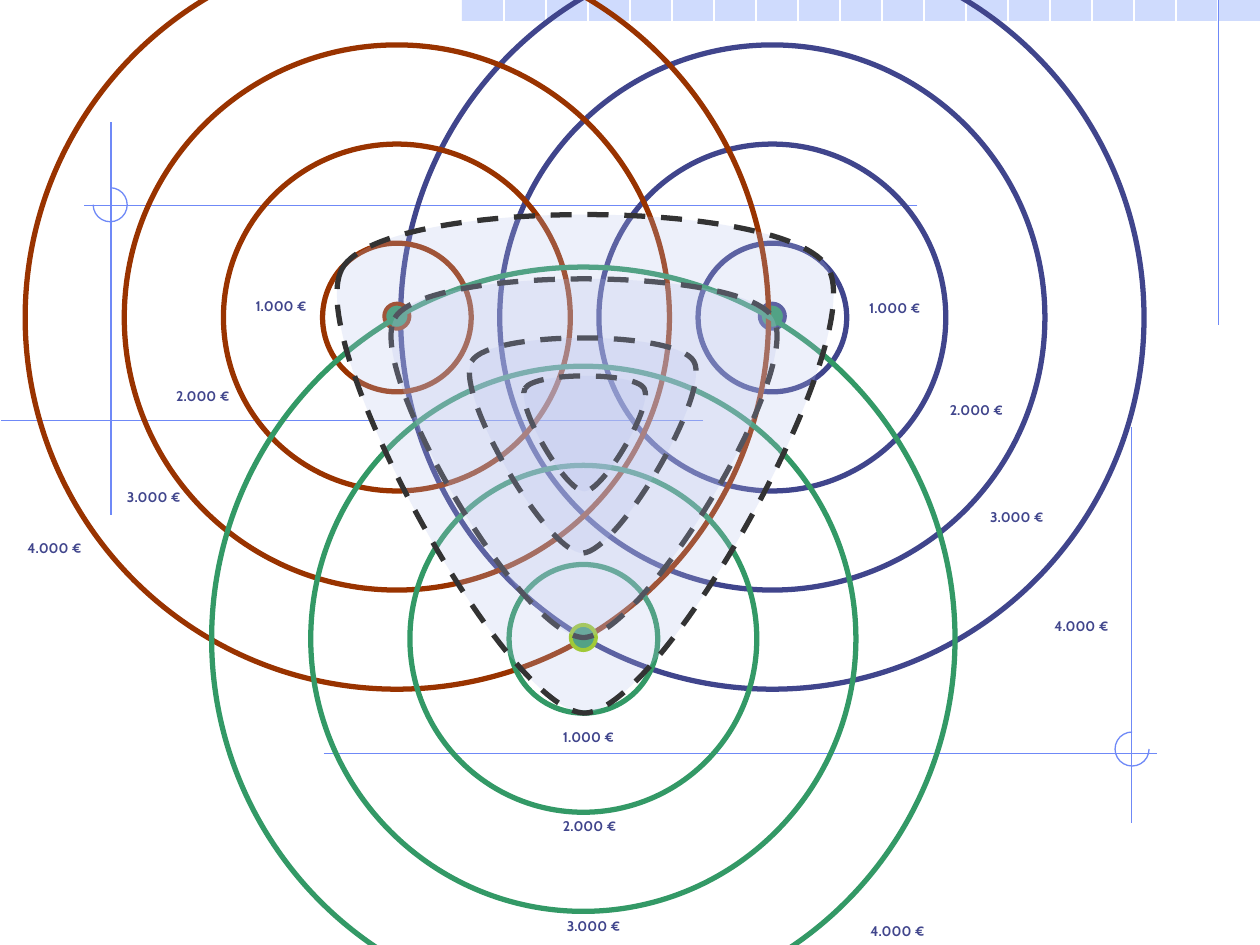
from lxml.etree import SubElement
from pptx import Presentation
from pptx.dml.color import RGBColor
from pptx.enum.dml import MSO_LINE
from pptx.enum.shapes import MSO_CONNECTOR, MSO_SHAPE
from pptx.oxml.ns import qn
from pptx.util import Inches, Pt

PALE = RGBColor(0xCF, 0xDB, 0xFD)
WHITE = RGBColor(0xFF, 0xFF, 0xFF)
SKY = RGBColor(0x6F, 0x89, 0xF7)
NAVY = RGBColor(0x40, 0x45, 0x8C)
RUST = RGBColor(0x99, 0x33, 0x00)
GREEN = RGBColor(0x33, 0x99, 0x66)
LIME = RGBColor(0x99, 0xCC, 0x00)
HAZE = RGBColor(0xB7, 0xC1, 0xEB)
DARK = RGBColor(0x33, 0x33, 0x33)

WIDE, HIGH = 10, 7.5
CELL = WIDE / 30
COSTS = ["1.000 €", "2.000 €", "3.000 €", "4.000 €"]
OUTER, INNER, DOT = 5.9, 1.18, 0.2
BLOB = [(0.07, 0.14), (0.14, 0), (0.86, 0), (0.93, 0.14),
        (1, 0.28), (0.64, 0.99), (0.5, 1),
        (0.36, 1), (0, 0.28), (0.07, 0.14)]


def add_text(slide, text, box, size=8, color=NAVY, bold=True, font="Cabin"):
    frame = slide.shapes.add_textbox(*map(Inches, box)).text_frame
    frame.word_wrap = True
    run = frame.paragraphs[0].add_run()
    run.text = text
    run.font.size = Pt(size)
    run.font.bold = bold
    run.font.name = font
    run.font.color.rgb = color


def paint(shape, fill=None, line=None, width=0.75):
    shape.shadow.inherit = False
    if fill is None:
        shape.fill.background()
    else:
        shape.fill.solid()
        shape.fill.fore_color.rgb = fill
    if line is None:
        shape.line.fill.background()
    else:
        shape.line.color.rgb = line
        shape.line.width = Pt(width)


def add_shape(slide, kind, box, **style):
    shape = slide.shapes.add_shape(kind, *map(Inches, box))
    paint(shape, **style)
    return shape


def add_line(slide, ends, color):
    line = slide.shapes.add_connector(MSO_CONNECTOR.STRAIGHT, *map(Inches, ends))
    line.line.color.rgb = color
    line.line.width = Pt(0.75)
    SubElement(line._element.spPr, qn("a:effectLst"))


def add_bar(slide, box):
    left, top, width, height = box
    add_shape(slide, MSO_SHAPE.RECTANGLE, box, fill=PALE)
    for col in range(1, round(width / CELL)):
        x = left + col * CELL
        add_line(slide, (x, top, x, HIGH), WHITE)


def add_mark(slide, box, start, end):
    arc = add_shape(slide, MSO_SHAPE.ARC, box, line=SKY)
    arc.adjustments[0] = start * 0.6
    arc.adjustments[1] = end * 0.6


def add_frame(slide):
    add_bar(slide, (11 * CELL, 0, 19 * CELL, CELL / 2))
    for ends in [(9.67, 0, 9.67, 2.58), (0.88, 0.97, 0.88, 4.09),
                 (5.58, 3.34, 0.01, 3.34), (7.28, 1.63, 0.67, 1.63),
                 (2.57, 5.98, 9.18, 5.98), (8.98, 3.39, 8.98, 6.53)]:
        add_line(slide, ends, SKY)
    add_mark(slide, (0.74, 1.49, 0.27, 0.27), 270, 180)
    add_mark(slide, (8.85, 5.81, 0.27, 0.27), 0, 270)


def add_rings(slide, left, top, color, rim, spots):
    step = (OUTER - INNER) / (len(COSTS) - 1)
    for size in [INNER + step * n for n in range(len(COSTS))]:
        gap = (OUTER - size) / 2
        add_shape(slide, MSO_SHAPE.OVAL, (left + gap, top + gap, size, size),
                  line=color, width=3)
    gap = (OUTER - DOT) / 2
    add_shape(slide, MSO_SHAPE.OVAL, (left + gap, top + gap - 0.01, DOT, DOT),
              fill=GREEN, line=rim, width=2.25)
    for cost, (x, y) in zip(COSTS, spots):
        add_text(slide, cost, (left + x, top + y, 1.73, 0.23))


def add_blob(slide, left, top, width, height):
    points = [(Inches(left + x * width), Inches(top + y * height)) for x, y in BLOB]
    draft = slide.shapes.build_freeform(*points[0])
    draft.add_line_segments(points[1:], close=True)
    shape = draft.convert_to_shape()
    paint(shape, fill=HAZE, line=DARK, width=3)
    shape.line.dash_style = MSO_LINE.DASH
    tint = shape._element.spPr.find(qn("a:solidFill"))[0]
    SubElement(tint, qn("a:alpha")).set("val", "24000")
    legs = list(shape._element.iter(qn("a:lnTo")))
    for first in range(0, len(BLOB) - 1, 3):
        trio = legs[first:first + 3]
        curve = trio[0].makeelement(qn("a:cubicBezTo"))
        trio[0].addprevious(curve)
        for leg in trio:
            curve.append(leg[0])
            leg.getparent().remove(leg)


def main():
    deck = Presentation()
    deck.slide_width, deck.slide_height = Inches(WIDE), Inches(HIGH)
    slide = deck.slides.add_slide(deck.slide_layouts[6])
    add_frame(slide)
    add_rings(slide, 3.18, -0.43, NAVY, NAVY,
              [(3.62, 2.76), (4.26, 3.57), (4.58, 4.42), (5.09, 5.28)])
    add_rings(slide, 0.2, -0.43, RUST, RUST,
              [(1.73, 2.74), (1.1, 3.46), (0.71, 4.26), (-0.08, 4.66)])
    add_rings(slide, 1.68, 2.12, GREEN, LIME,
              [(2.69, 3.61), (2.69, 4.32), (2.72, 5.11), (5.13, 5.15)])
    for box in [(2.89, 2.11, 3.49, 2.95), (3.6, 2.62, 2.05, 1.77),
                (4.09, 2.95, 1.1, 0.95), (2.4, 1.56, 4.49, 4.1)]:
        add_blob(slide, *box)
    deck.save("out.pptx")


if __name__ == "__main__":
    main()
